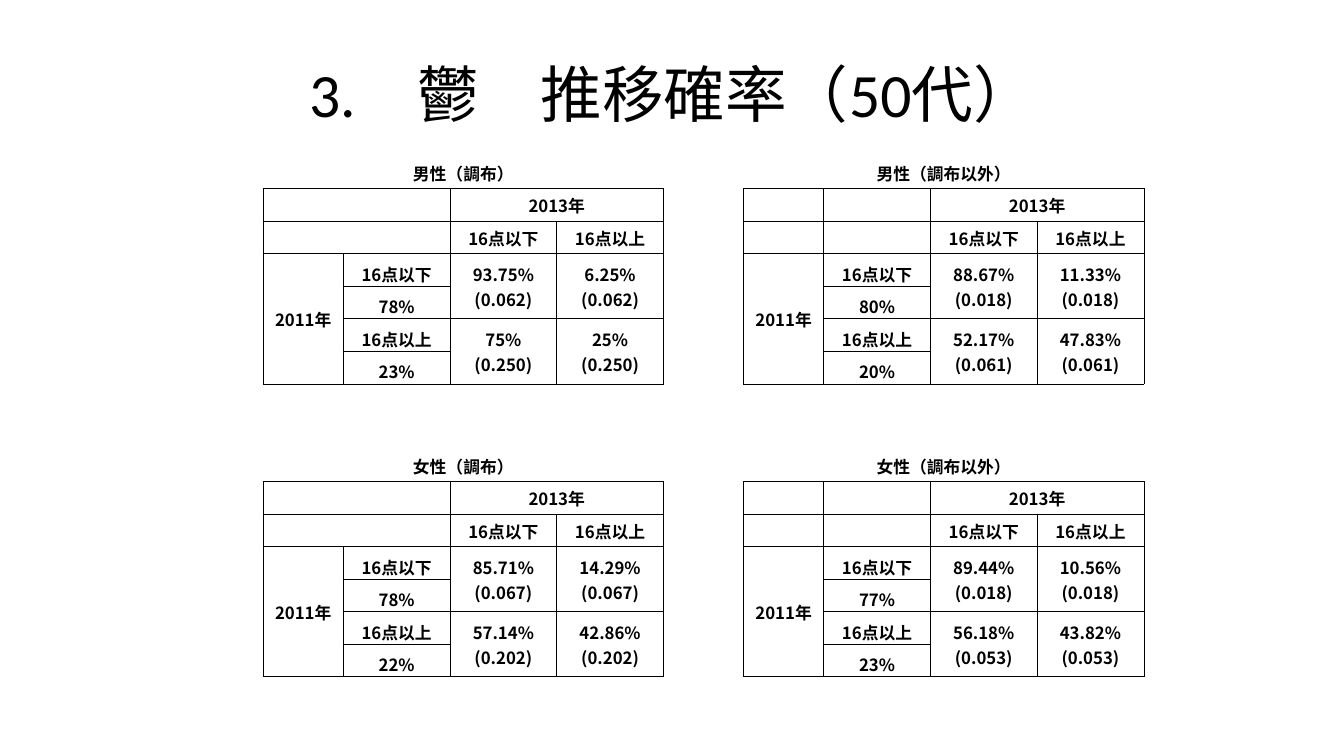
from lxml.etree import SubElement
from pptx import Presentation
from pptx.dml.color import RGBColor
from pptx.enum.text import MSO_ANCHOR as ANCHOR, PP_ALIGN as ALIGN
from pptx.oxml.ns import qn
from pptx.util import Pt

PX = 3175  # EMU; the slide is 3840 px wide
COLORS = {"ink": "000000"}
TITLE_FONT, TABLE_FONT = "Calibri", "Noto Sans CJK JP"
NO_STYLE = "{2D5ABB26-0587-4C30-8999-92F81FD0307C}"

LABEL_W, VALUE_W, ROW_H = 229, 305, 93
COLS = [LABEL_W] + [VALUE_W] * 3 + [LABEL_W] * 2 + [VALUE_W] * 3
ROWS = 16
BLOCK_ROWS, BLOCK_COLS = 7, 4
LEVELS = ["16点以下", "16点以上"]

# first row, first column, caption, then per 2011 level: share, (value, error) pairs
BLOCKS = [
    (0, 0, "男性（調布）", [("78%", [("93.75%", "0.062"), ("6.25%", "0.062")]),
                        ("23%", [("75%", "0.250"), ("25%", "0.250")])]),
    (0, 5, "男性（調布以外）", [("80%", [("88.67%", "0.018"), ("11.33%", "0.018")]),
                          ("20%", [("52.17%", "0.061"), ("47.83%", "0.061")])]),
    (9, 0, "女性（調布）", [("78%", [("85.71%", "0.067"), ("14.29%", "0.067")]),
                        ("22%", [("57.14%", "0.202"), ("42.86%", "0.202")])]),
    (9, 5, "女性（調布以外）", [("77%", [("89.44%", "0.018"), ("10.56%", "0.018")]),
                          ("23%", [("56.18%", "0.053"), ("43.82%", "0.053")])]),
]


def style_paragraph(p, font, size, bold):
    p.alignment = ALIGN.CENTER
    p.font.size, p.font.bold = Pt(size), bold
    p.font.color.rgb = RGBColor.from_string(COLORS["ink"])
    p.font.name = font


def add_title(s, text):
    title = s.shapes.title
    title.left, title.top, title.width, title.height = (
        v * PX for v in (192, 86, 3456, 360))
    tf = title.text_frame
    tf.text = text
    tf.vertical_anchor = ANCHOR.MIDDLE
    style_paragraph(tf.paragraphs[0], TITLE_FONT, 44, False)


def add_plain_table(s, left, top):
    """Add the grid without a table style, lines or fills."""
    frame = s.shapes.add_table(ROWS, len(COLS), left * PX, top * PX,
                               sum(COLS) * PX, ROWS * ROW_H * PX)
    table = frame.table
    table.first_row = table.horz_banding = False
    table._tbl.tblPr.find(qn("a:tableStyleId")).text = NO_STYLE
    for col, width in zip(table.columns, COLS):
        col.width = width * PX
    for row in table.rows:
        row.height = ROW_H * PX
    for cell in table.iter_cells():
        cell.fill.background()
        cell.margin_left = cell.margin_right = cell.margin_top = 3 * PX
        cell.margin_bottom = 0
        write(cell, "")
    return table


def write(cell, text, anchor=ANCHOR.MIDDLE):
    cell.text = text
    cell.vertical_anchor = anchor
    p = cell.text_frame.paragraphs[0]
    style_paragraph(p, TABLE_FONT, 12, True)
    if p.font._rPr.find(qn("a:ea")) is None:
        SubElement(p.font._rPr, qn("a:ea"), typeface=TABLE_FONT)
    if p._p.find(qn("a:endParaRPr")) is None:
        SubElement(p._p, qn("a:endParaRPr"), sz="1200")


def set_borders(cell, sides):
    """Draw the given sides, a subset of "LRTB" in that order."""
    tcPr = cell._tc.get_or_add_tcPr()
    for i, side in enumerate(sides):
        ln = SubElement(tcPr, qn(f"a:ln{side}"), w=str(Pt(0.5)))
        fill = SubElement(ln, qn("a:solidFill"))
        SubElement(fill, qn("a:srgbClr"), val=COLORS["ink"])
        tcPr.insert(i, ln)


def add_block(table, top, left, caption, levels):
    def cell(r, c):
        return table.cell(top + r, left + c)

    def merged(r, c, rows, cols):
        cell(r, c).merge(cell(r + rows - 1, c + cols - 1))
        return cell(r, c)

    corner = {(1, 0): "LT", (1, 1): "RT", (2, 0): "LB", (2, 1): "RB"}
    for r in range(BLOCK_ROWS):
        for c in range(BLOCK_COLS):
            set_borders(cell(r, c), "B" if r == 0 else corner.get((r, c), "LRTB"))

    write(merged(0, 0, 1, 4), caption)
    write(merged(1, 2, 1, 2), "2013年")
    write(merged(3, 0, 4, 1), "2011年")
    for i, (level, (share, values)) in enumerate(zip(LEVELS, levels)):
        r = 3 + 2 * i
        write(cell(2, 2 + i), level)
        write(cell(r, 1), level, ANCHOR.BOTTOM)
        write(cell(r + 1, 1), share, ANCHOR.BOTTOM)
        for j, (value, error) in enumerate(values):
            write(merged(r, 2 + j, 2, 1), f"{value}\v({error})")


def main():
    prs = Presentation()
    prs.slide_width, prs.slide_height = 3840 * PX, 2160 * PX
    s = prs.slides.add_slide(prs.slide_layouts[5])
    add_title(s, "3.　鬱　推移確率（50代）")
    table = add_plain_table(s, 752, 446)
    for block in BLOCKS:
        add_block(table, *block)
    prs.save("out.pptx")


if __name__ == "__main__":
    main()
